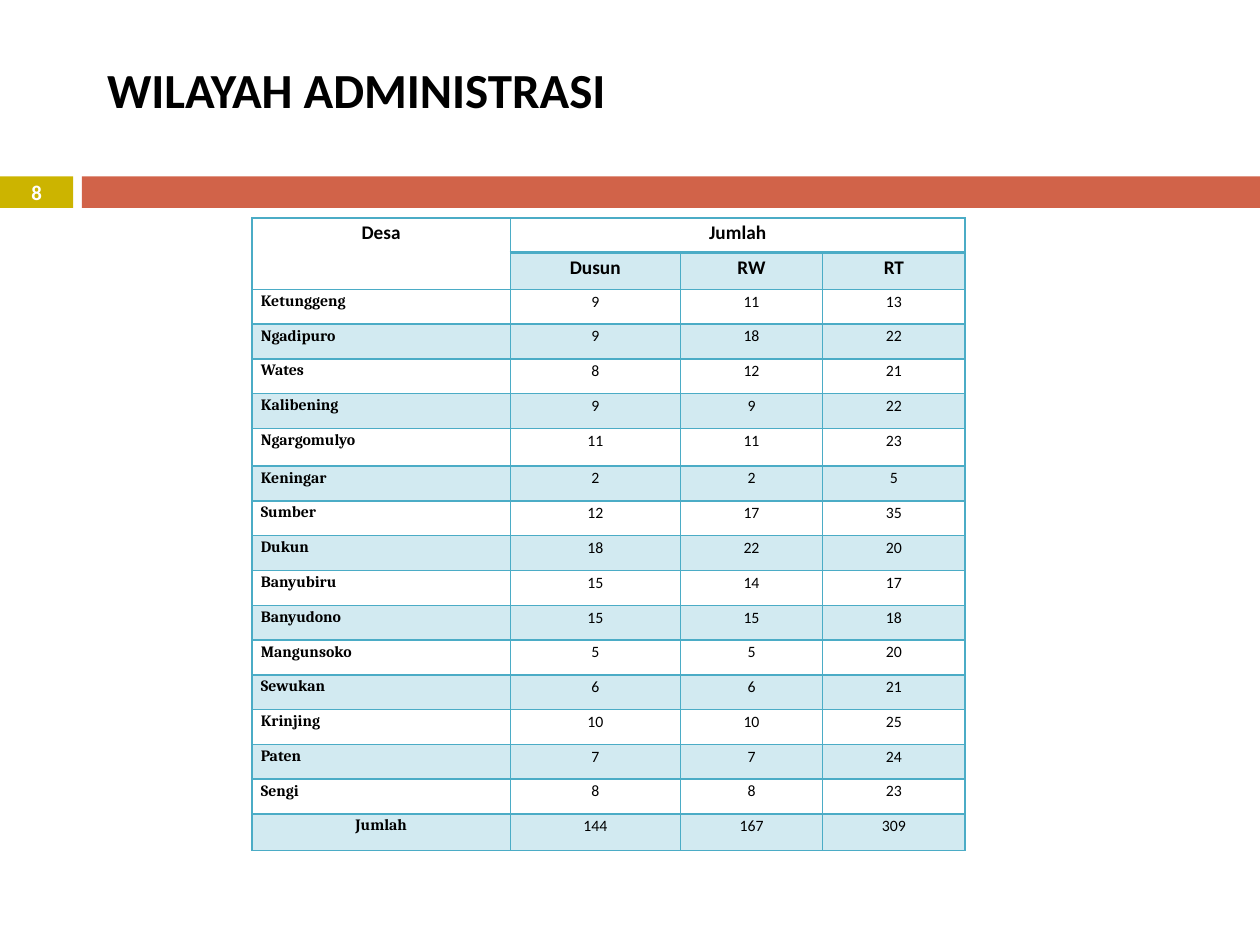
from dataclasses import dataclass

from lxml.etree import SubElement as Sub
from pptx import Presentation
from pptx.dml.color import RGBColor as RGB
from pptx.enum.shapes import MSO_SHAPE as Kind
from pptx.enum.text import MSO_ANCHOR as Anchor, MSO_AUTO_SIZE as Auto, PP_ALIGN as Align
from pptx.oxml.ns import qn
from pptx.util import Inches, Pt


@dataclass(frozen=True)
class Theme:
    sans: str = "Calibri"
    serif: str = "Cambria"
    ink: str = "000000"
    white: str = "FFFFFF"
    gold: str = "CCB400"
    red: str = "D16349"
    line: str = "4BACC6"
    band: str = "D2EAF1"
    title: float = 28
    page: float = 11.9
    head: float = 11
    body: float = 9
    thin: float = 1
    thick: float = 2.25


T = Theme()
COLS = [2.05, 1.35, 1.13, 1.13]
TALL = {1: 0.29, 6: 0.3, 17: 0.29}  # rows that differ from the even height
HEIGHT = 5.02
HEADS = [["Desa", "Jumlah", "", ""], ["", "Dusun", "RW", "RT"]]
DATA = [
    ["Ketunggeng", 9, 11, 13],
    ["Ngadipuro", 9, 18, 22],
    ["Wates", 8, 12, 21],
    ["Kalibening", 9, 9, 22],
    ["Ngargomulyo", 11, 11, 23],
    ["Keningar", 2, 2, 5],
    ["Sumber", 12, 17, 35],
    ["Dukun", 18, 22, 20],
    ["Banyubiru", 15, 14, 17],
    ["Banyudono", 15, 15, 18],
    ["Mangunsoko", 5, 5, 20],
    ["Sewukan", 6, 6, 21],
    ["Krinjing", 10, 10, 25],
    ["Paten", 7, 7, 24],
    ["Sengi", 8, 8, 23],
    ["Jumlah", 144, 167, 309],
]


def style(obj, form):
    for key, val in form.items():
        setattr(obj, key, val)


def write(frame, text, size, face=T.sans, color=T.ink, bold=True, **para):
    line = frame.paragraphs[0]
    style(line, para)
    run = line.add_run()
    run.text = text
    style(run.font, {"size": Pt(size), "name": face, "bold": bold})
    run.font.color.rgb = RGB.from_string(color)


def add_bar(slide, left, width, color):
    bar = slide.shapes.add_shape(
        Kind.RECTANGLE, Inches(left), Inches(1.4), Inches(width), Inches(0.25))
    bar.shadow.inherit = False
    bar.fill.solid()
    bar.fill.fore_color.rgb = RGB.from_string(color)
    bar.line.fill.background()


def add_title(slide, text):
    title = slide.shapes.title
    style(title, {"left": Inches(0.75), "top": Inches(0.42),
                  "width": Inches(7.75), "height": Inches(0.57)})
    style(title.text_frame, {"word_wrap": True, "vertical_anchor": Anchor.TOP,
                             "auto_size": Auto.SHAPE_TO_FIT_TEXT})
    write(title.text_frame, text, T.title, alignment=Align.LEFT)


def add_page(slide, text):
    box = slide.shapes.add_textbox(0, Inches(1.39), Inches(0.58), Inches(0.27))
    style(box.text_frame, {"word_wrap": True, "vertical_anchor": Anchor.MIDDLE})
    write(box.text_frame, text, T.page, color=T.white, alignment=Align.CENTER)


def add_edges(cell, row, col):
    thick = {0: "B", 1: "T"}.get(row) if col else None
    props = cell._tc.get_or_add_tcPr()
    for side in "LRTB":
        width = T.thick if side == thick else T.thin
        edge = Sub(props, qn(f"a:ln{side}"), w=str(Pt(width)))
        Sub(Sub(edge, qn("a:solidFill")), qn("a:srgbClr"), val=T.line)


def fill_cell(cell, row, col, value):
    style(cell, {"margin_left": Inches(0.07), "margin_right": Inches(0.07),
                 "margin_top": 0, "margin_bottom": 0,
                 "vertical_anchor": Anchor.TOP})
    add_edges(cell, row, col)
    # Odd rows are tinted, apart from the merged village heading
    if row % 2 and (row, col) != (1, 0):
        cell.fill.solid()
        cell.fill.fore_color.rgb = RGB.from_string(T.band)
    else:
        cell.fill.background()
    if value == "":
        return
    head = row < len(HEADS)
    name = not head and col == 0
    left = name and value != "Jumlah"
    write(cell.text_frame, str(value), T.head if head else T.body,
          face=T.serif if name else T.sans, bold=head or name,
          alignment=Align.LEFT if left else Align.CENTER, line_spacing=1.15)


def add_grid(slide):
    rows = HEADS + DATA
    table = slide.shapes.add_table(
        len(rows), len(COLS), Inches(2), Inches(1.73),
        Inches(sum(COLS)), Inches(HEIGHT)).table
    style(table, {"first_row": False, "horz_banding": False})
    for col, width in zip(table.columns, COLS):
        col.width = Inches(width)
    even = (HEIGHT - sum(TALL.values())) / (len(rows) - len(TALL))
    for r, values in enumerate(rows):
        table.rows[r].height = Inches(TALL.get(r, even))
        for c, value in enumerate(values):
            fill_cell(table.cell(r, c), r, c, value)
    table.cell(0, 0).merge(table.cell(1, 0))
    table.cell(0, 1).merge(table.cell(0, 3))


def main():
    deck = Presentation()
    style(deck, {"slide_width": Inches(10), "slide_height": Inches(7.5)})
    slide = deck.slides.add_slide(deck.slide_layouts[5])
    # Divider band with page number
    add_bar(slide, 0, 0.58, T.gold)
    add_bar(slide, 0.65, 9.35, T.red)
    add_page(slide, "8")
    # Heading and village table
    add_title(slide, "WILAYAH ADMINISTRASI")
    add_grid(slide)
    deck.save("out.pptx")


if __name__ == "__main__":
    main()
